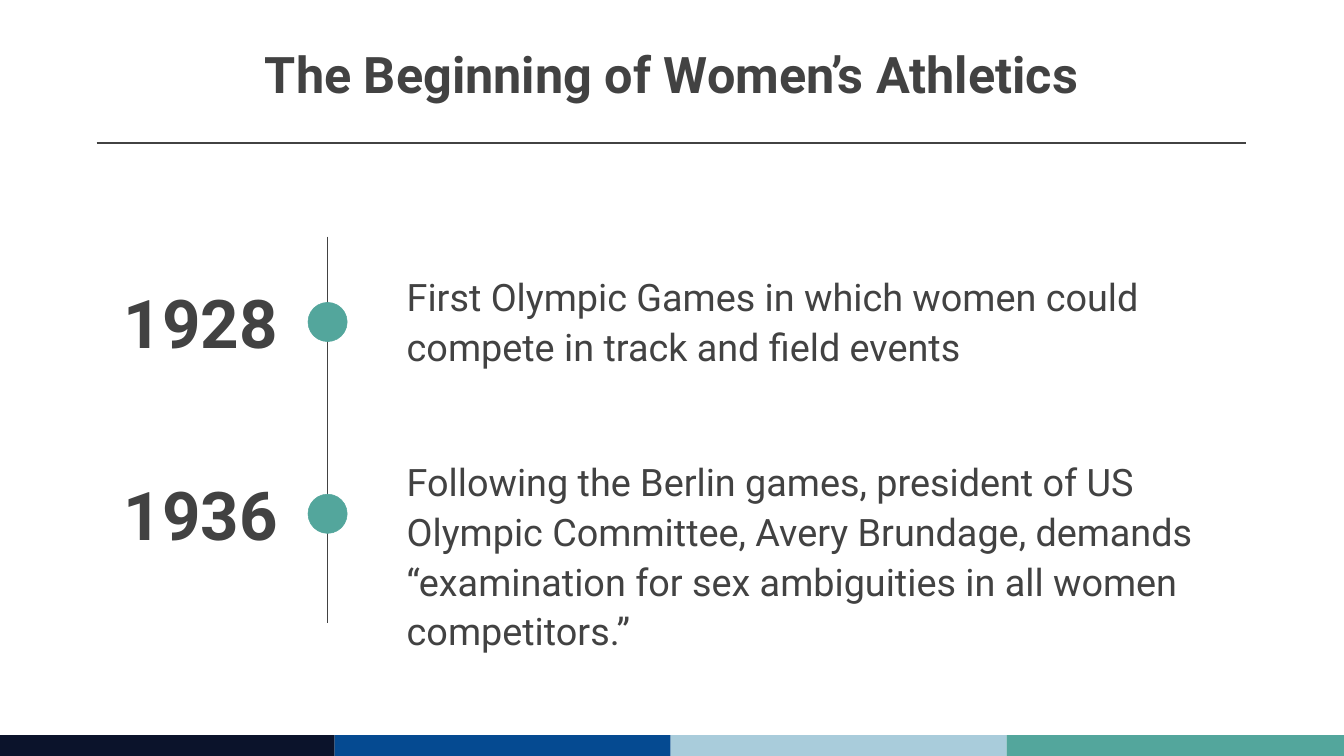
from pptx import Presentation
from pptx.dml.color import RGBColor
from pptx.enum.shapes import MSO_CONNECTOR as Link, MSO_SHAPE as Shape
from pptx.enum.text import MSO_ANCHOR as Anchor, MSO_AUTO_SIZE as AutoSize, PP_ALIGN as Align
from pptx.oxml.ns import qn
from pptx.util import Pt
from lxml import etree

PX = 12700  # EMU per px on a 1920 x 1080 slide
INK, TEAL = "424242", "53A69C"


def color(hex_string):
    return RGBColor.from_string(hex_string)


def write(paragraph, text, size, bold=False):
    run = paragraph.add_run()
    run.text = text
    run.font.name = "Roboto"
    run.font.size = Pt(size)
    run.font.bold = bold
    run.font.color.rgb = color(INK)


prs = Presentation()
prs.slide_width, prs.slide_height = 1920 * PX, 1080 * PX
slide = prs.slides.add_slide(prs.slide_layouts[5])
shapes = slide.shapes

# Title
title = shapes.title
title.left, title.top, title.width, title.height = 366 * PX, 35 * PX, 1187 * PX, 155 * PX
heading = title.text_frame
heading.margin_left = heading.margin_top = heading.margin_right = heading.margin_bottom = 0
heading.vertical_anchor = Anchor.MIDDLE
heading.word_wrap = True
heading.auto_size = AutoSize.NONE
heading.paragraphs[0].alignment = Align.CENTER
heading.paragraphs[0].line_spacing = 0.8
write(heading.paragraphs[0], "The Beginning of Women’s Athletics", 72, bold=True)

# Title rule and timeline axis
for x1, y1, x2, y2, weight in [(138, 204, 1780, 204, 3), (468, 338, 468, 890, 2.25)]:
    rule = shapes.add_connector(Link.STRAIGHT, x1 * PX, y1 * PX, x2 * PX, y2 * PX)
    rule.line.color.rgb = color(INK)
    rule.line.width = Pt(weight)
    etree.SubElement(rule._element.spPr, qn("a:effectLst"))

# Footer colour band
band_edges = [-8, 478, 958, 1438, 1926]
band_colors = ["0B132B", "054A91", "A9CCDB", TEAL]
for left, right, fill in zip(band_edges, band_edges[1:], band_colors):
    band = shapes.add_shape(Shape.RECTANGLE, left * PX, 1050 * PX, (right - left) * PX, 34 * PX)
    band.shadow.inherit = False
    band.fill.solid()
    band.fill.fore_color.rgb = color(fill)
    band.line.fill.background()

# Event descriptions
events = [
    ("1928", "First Olympic Games in which women could compete in track and field events"),
    ("1936", "Following the Berlin games, president of US Olympic Committee, Avery Brundage, "
             "demands “examination for sex ambiguities in all women competitors.”"),
]
story = shapes.add_textbox(581 * PX, 384 * PX, 1187 * PX, 533 * PX).text_frame
story.margin_left = story.margin_top = story.margin_right = story.margin_bottom = 0
story.word_wrap = True

for i, (year, event) in enumerate(events):
    paragraph = story.add_paragraph() if i else story.paragraphs[0]
    paragraph.line_spacing = 1.1
    paragraph.space_before = Pt(122 * i)
    write(paragraph, event, 54)

    # Timeline dot and year
    row_top = 395 + 274 * i
    dot = shapes.add_shape(Shape.OVAL, 440 * PX, (row_top + 37) * PX, 56 * PX, 56 * PX)
    dot.shadow.inherit = False
    dot.fill.solid()
    dot.fill.fore_color.rgb = color(TEAL)
    dot.line.color.rgb = color(TEAL)
    dot.line.width = Pt(0.75)

    label = shapes.add_textbox(170 * PX, row_top * PX, 237 * PX, 131 * PX).text_frame
    label.margin_left = label.margin_top = label.margin_right = label.margin_bottom = 7 * PX
    label.word_wrap = True
    label.auto_size = AutoSize.SHAPE_TO_FIT_TEXT
    write(label.paragraphs[0], year, 96, bold=True)

prs.save("out.pptx")
